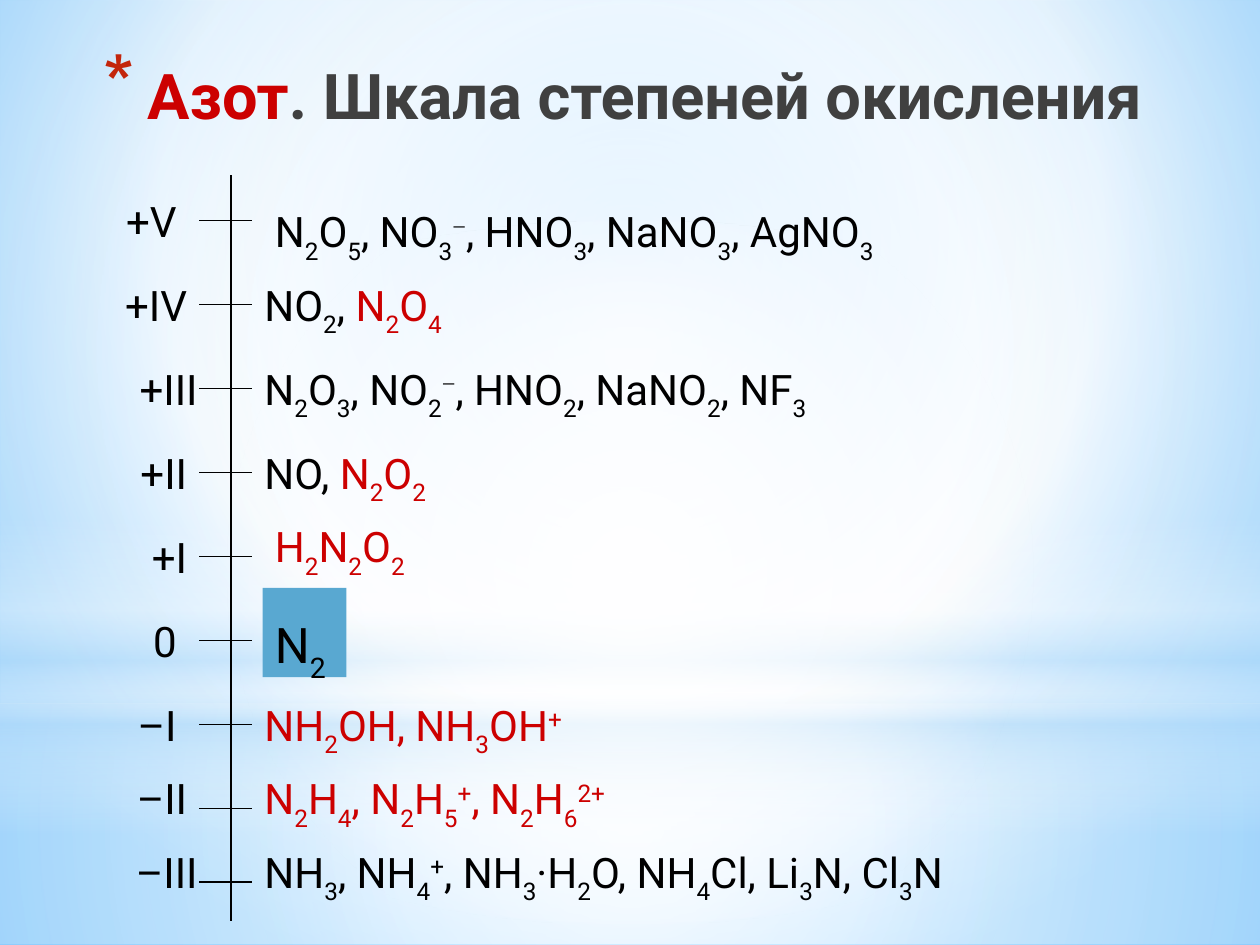
from itertools import groupby

from lxml.etree import SubElement
from pptx import Presentation
from pptx.dml.color import RGBColor
from pptx.enum.shapes import MSO_CONNECTOR, MSO_SHAPE
from pptx.enum.text import MSO_ANCHOR, MSO_AUTO_SIZE, PP_ALIGN
from pptx.oxml.ns import qn
from pptx.util import Pt

PX = 7620
WIDTH, HEIGHT = 1200, 900
COLORS = {
    "black": "000000",
    "red": "CC0000",
    "gray": "404040",
    "bullet": "C3260C",
    "nitrogen": "59A8D1",
    "white": "FFFFFF",
    "haze": "B4DCFA",
    "sky": "9ED5FF",
    "deep": "5BB9FF",
}
SUPERSCRIPTS = {"⁺": "+", "⁻": "−", "²": "2"}
LABEL_FORMAT = {"name": "Roboto", "size": Pt(24)}
NITROGEN_FORMAT = {"name": "Roboto", "size": Pt(28)}
TITLE_FORMAT = {"name": "Roboto", "size": Pt(36), "bold": True}
MINUS_FORMAT = {"name": "Times New Roman"}
FRAME_FORMAT = {
    "word_wrap": True,
    "auto_size": MSO_AUTO_SIZE.SHAPE_TO_FIT_TEXT,
    "vertical_anchor": MSO_ANCHOR.TOP,
}
CENTER = (50, 50, 50, 50)
PANELS = [
    (MSO_SHAPE.RECTANGLE, (0, 670, 1200, 230),
     [(0, "white", 91), (37, "white", 76), (100, "haze", 79)], CENTER),
    (MSO_SHAPE.RECTANGLE, (0, 0, 1200, 670),
     [(0, "white", 89), (48, "white", 62), (100, "haze", 79)], CENTER),
    (MSO_SHAPE.RECTANGLE, (0, 494, 1200, 300),
     [(0, "white", 0), (29, "white", 30), (45, "haze", 40),
      (55, "white", 26), (65, "haze", 60), (100, "white", 0)], None),
    (MSO_SHAPE.OVAL, (0, 210, 1200, 670),
     [(0, "white", 100), (56, "white", 0)], CENTER),
]
STATES = [
    ("+V", 210, (80, 180), (250, 190, 660), [("N2O5, NO3⁻, HNO3, NaNO3, AgNO3", "black")]),
    ("+IV", 290, (90, 260), (240, 260, 270), [("NO2, ", "black"), ("N2O4", "red")]),
    ("+III", 370, (100, 340), (240, 340, 580), [("N2O3, NO2⁻, HNO2, NaNO2, NF3", "black")]),
    ("+II", 450, (90, 420), (240, 420, 250), [("NO, ", "black"), ("N2O2", "red")]),
    ("+I", 530, (90, 500), (250, 490, 230), [("H2N2O2", "red")]),
    ("0", 610, (80, 580), None, None),
    ("–I", 690, (80, 660), (240, 660, 390), [("NH2OH, NH3OH⁺", "red")]),
    ("–II", 770, (90, 730), (240, 730, 410), [("N2H4, N2H5⁺, N2H6²⁺", "red")]),
    ("–III", 840, (100, 800), (240, 800, 860),
     [("NH3, NH4⁺, NH3·H2O, NH4Cl, Li3N, Cl3N", "black")]),
]


def assign(target, formats):
    for name, value in formats.items():
        setattr(target, name, value)


def baseline_of(character):
    if character in SUPERSCRIPTS:
        return 30000
    return -30000 if character.isdecimal() else 0


class SlideBuilder:
    def __init__(self, slide):
        self.slide = slide

    def color(self, name):
        return RGBColor.from_string(COLORS[name])

    def gradient(self, fill, owner, stops, focus):
        fill.gradient()
        element = owner.find(".//" + qn("a:gradFill"))
        for child in list(element):
            element.remove(child)
        stop_list = SubElement(element, qn("a:gsLst"))
        for position, name, opacity in stops:
            stop = SubElement(stop_list, qn("a:gs"), pos=str(position * 1000))
            color = SubElement(stop, qn("a:srgbClr"), val=COLORS[name])
            if opacity < 100:
                SubElement(color, qn("a:alpha"), val=str(opacity * 1000))
        if focus:
            path = SubElement(element, qn("a:path"), path="circle")
            sides = {side: str(value * 1000) for side, value in zip("ltrb", focus)}
            SubElement(path, qn("a:fillToRect"), **sides)
        else:
            SubElement(element, qn("a:lin"), ang="5400000", scaled="0")

    def background(self, stops, focus):
        self.gradient(self.slide.background.fill, self.slide.element, stops, focus)

    def shape(self, kind, box):
        shape = self.slide.shapes.add_shape(kind, *(value * PX for value in box))
        shape.shadow.inherit = False
        shape.line.fill.background()
        return shape

    def panel(self, kind, box, stops, focus):
        shape = self.shape(kind, box)
        self.gradient(shape.fill, shape.element, stops, focus)

    def line(self, *ends):
        connector = self.slide.shapes.add_connector(
            MSO_CONNECTOR.STRAIGHT, *(value * PX for value in ends))
        connector.line.width = Pt(0.75)
        connector.line.color.rgb = self.color("black")
        SubElement(connector.element.spPr, qn("a:effectLst"))

    def run(self, paragraph, text, color, formats):
        run = paragraph.add_run()
        run.text = text
        assign(run.font, formats)
        run.font.color.rgb = self.color(color)
        return run

    def formula(self, paragraph, parts, formats):
        for text, color in parts:
            for baseline, characters in groupby(text, baseline_of):
                shown = "".join(SUPERSCRIPTS.get(character, character) for character in characters)
                run = self.run(paragraph, shown, color, formats)
                if baseline:
                    run._r.get_or_add_rPr().set("baseline", str(baseline))
                if shown == "−":
                    assign(run.font, MINUS_FORMAT)

    def text_box(self, left, top, width):
        box = (left, top, width, 60)
        shape = self.slide.shapes.add_textbox(*(value * PX for value in box))
        assign(shape.text_frame, FRAME_FORMAT)
        return shape.text_frame.paragraphs[0]

    def label(self, text, left, top):
        paragraph = self.text_box(left, top, 100)
        paragraph.alignment = PP_ALIGN.RIGHT
        self.run(paragraph, text, "black", LABEL_FORMAT)

    def highlight(self, box, parts):
        shape = self.shape(MSO_SHAPE.RECTANGLE, box)
        shape.fill.solid()
        shape.fill.fore_color.rgb = self.color("nitrogen")
        assign(shape.text_frame, FRAME_FORMAT)
        paragraph = shape.text_frame.paragraphs[0]
        assign(paragraph, {"alignment": PP_ALIGN.LEFT, "line_spacing": 1.3})
        self.formula(paragraph, parts, NITROGEN_FORMAT)

    def title(self, box, parts):
        title = self.slide.shapes.title
        title.element.getparent().append(title.element)
        assign(title, dict(zip(("left", "top", "width", "height"),
                               (value * PX for value in box))))
        assign(title.text_frame, {"word_wrap": True, "auto_size": MSO_AUTO_SIZE.NONE,
                                  "vertical_anchor": MSO_ANCHOR.MIDDLE})
        paragraph = title.text_frame.paragraphs[0]
        paragraph.alignment = PP_ALIGN.RIGHT
        for text, color in parts:
            self.run(paragraph, text, color, TITLE_FORMAT)
        properties = paragraph._p.get_or_add_pPr()
        properties.set("marL", str(42 * PX))
        properties.set("indent", str(-42 * PX))
        bullet_color = SubElement(properties, qn("a:buClr"))
        SubElement(bullet_color, qn("a:srgbClr"), val=COLORS["bullet"])
        SubElement(properties, qn("a:buSzPct"), val="128000")
        SubElement(properties, qn("a:buChar"), char="*")


def main():
    presentation = Presentation()
    assign(presentation, {"slide_width": WIDTH * PX, "slide_height": HEIGHT * PX})
    builder = SlideBuilder(presentation.slides.add_slide(presentation.slide_layouts[5]))
    builder.background([(0, "sky", 100), (60, "white", 100), (100, "deep", 100)],
                       (20, 10, 20, 60))
    for panel in PANELS:
        builder.panel(*panel)
    builder.title((80, 40, 1020, 100),
                  [("Азот", "red"), (". Шкала степеней окисления", "gray")])
    builder.line(220, 877, 220, 167)
    for label, tick, label_place, formula_place, parts in STATES:
        builder.line(190, tick, 240, tick)
        builder.label(label, *label_place)
        if parts:
            builder.formula(builder.text_box(*formula_place), parts, LABEL_FORMAT)
    builder.highlight((250, 560, 80, 85), [("N2", "black")])
    presentation.save("out.pptx")


if __name__ == "__main__":
    main()
